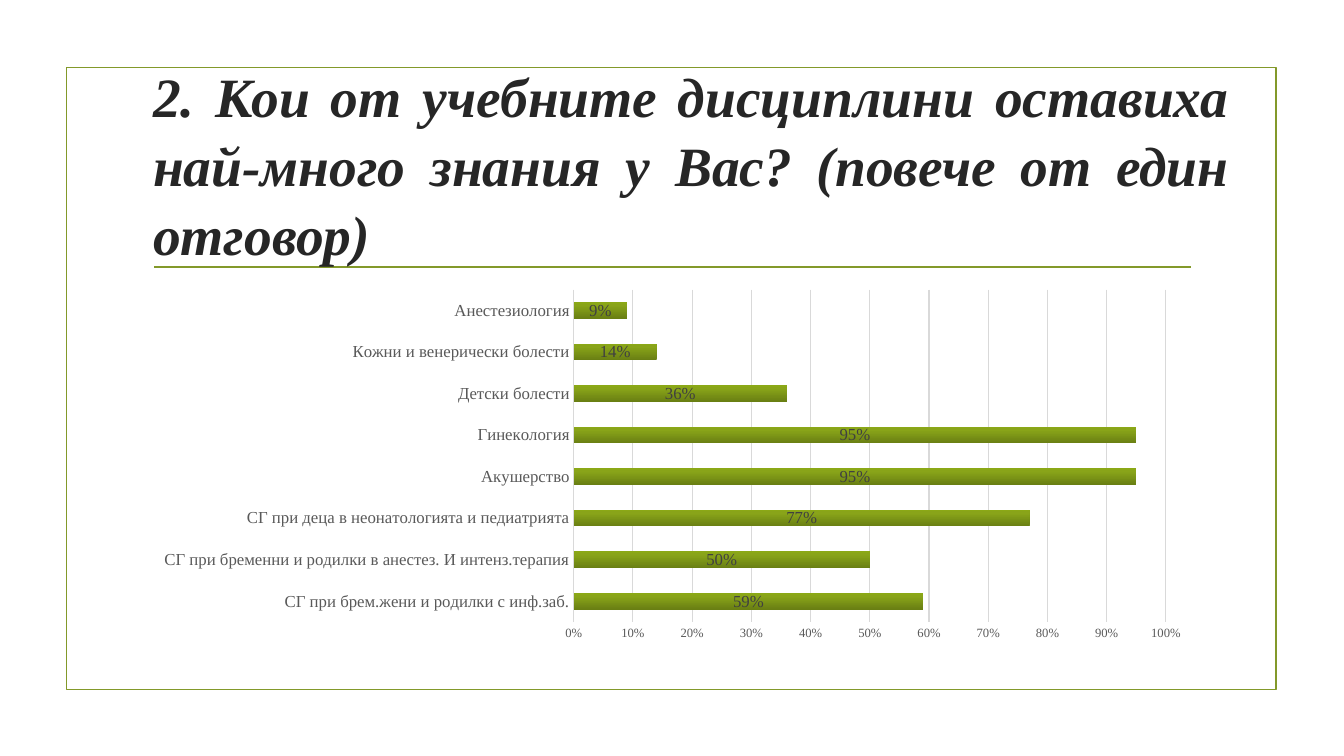
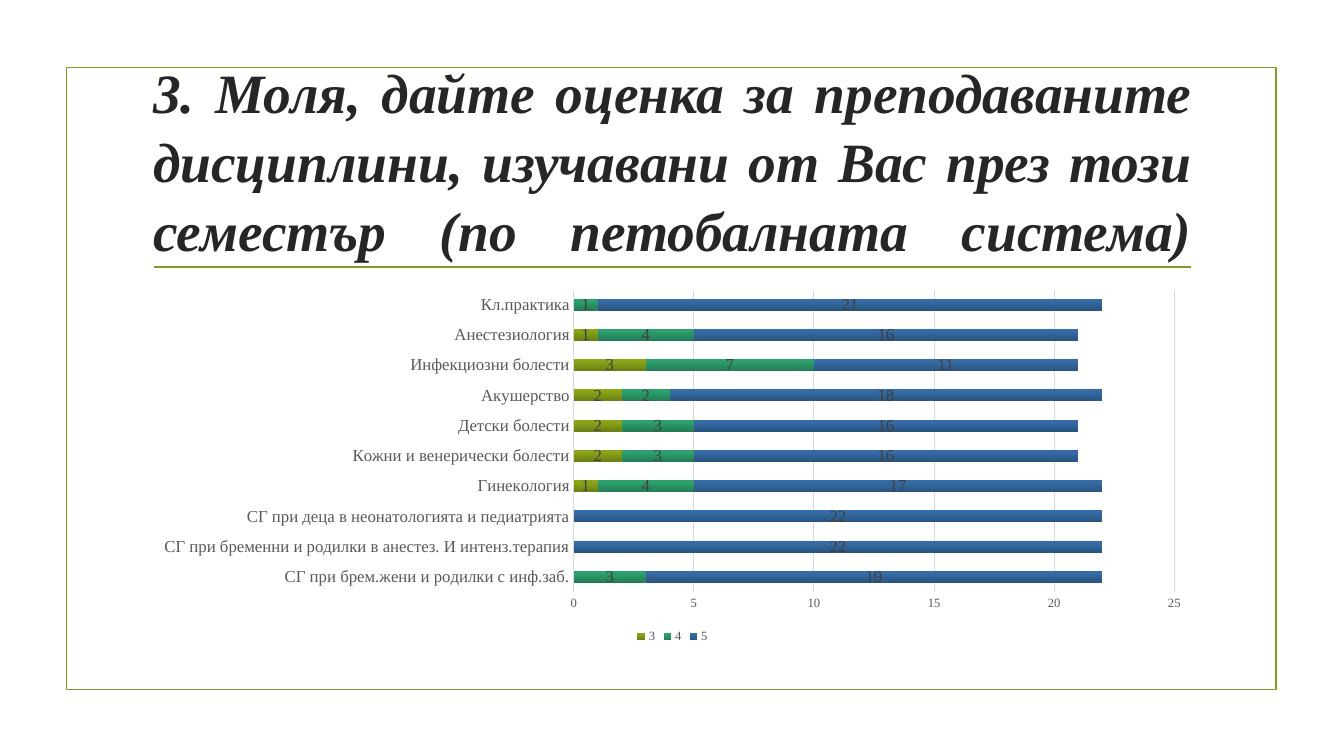
"""Build two survey slides with stacked bar charts of course disciplines."""
from dataclasses import dataclass
from typing import Optional

import lxml.etree
import pptx
import pptx.chart.data
import pptx.dml.color
import pptx.enum.chart
import pptx.enum.dml
import pptx.enum.shapes
import pptx.enum.text
import pptx.oxml
import pptx.oxml.ns
import pptx.util
from pptx.util import Inches


@dataclass(frozen=True)
class Theme:
    face: str = "Times New Roman"
    accent: str = "83992A"
    title: str = "262626"
    axis_text: str = "595959"
    label_text: str = "404040"
    grid: str = "D9D9D9"
    title_size: float = 39.6
    category_size: float = 12
    scale_size: float = 9
    chart_size: float = 10
    rule_width: float = 1.25


@dataclass(frozen=True)
class Gradient:
    dark: str
    middle: str
    light: str


@dataclass(frozen=True)
class Answers:
    name: str
    values: tuple[Optional[float], ...]
    shade: Gradient


@dataclass(frozen=True)
class Question:
    title: str
    title_top: float
    title_width: float
    title_height: float
    disciplines: tuple[str, ...]
    answers: tuple[Answers, ...]
    number_format: str
    scale_max: float
    scale_step: float
    has_legend: bool


THEME = Theme()
OLIVE = Gradient("697F13", "89A419", "8BA816")
GREEN = Gradient("237B55", "2DA06E", "2BA26F")
BLUE = Gradient("29537F", "356CA5", "336DA8")

PRACTICE = (
    "СГ при брем.жени и родилки с инф.заб.",
    "СГ при бременни и родилки в анестез. И интенз.терапия",
    "СГ при деца в неонатологията и педиатрията",
)

QUESTIONS = (
    Question(
        "2. Кои от учебните дисциплини оставиха най-много знания у Вас? (повече от един отговор)",
        1.43, 10.87, 1.04,
        PRACTICE + ("Акушерство", "Гинекология", "Детски болести",
                    "Кожни и венерически болести", "Анестезиология"),
        (Answers("Series 1", (0.59, 0.5, 0.77, 0.95, 0.95, 0.36, 0.14, 0.09), OLIVE),),
        "0%", 1, 0.1, False,
    ),
    Question(
        "3. Моля, дайте оценка за преподаваните дисциплини, изучавани от Вас през този семестър "
        "(по петобалната система)",
        1.31, 10.5, 1.19,
        PRACTICE + ("Гинекология", "Кожни и венерически болести", "Детски болести",
                    "Акушерство", "Инфекциозни болести", "Анестезиология", "Кл.практика"),
        (
            Answers("3", (None, None, None, 1, 2, 2, 2, 3, 1, None), OLIVE),
            Answers("4", (3, None, None, 4, 3, 3, 2, 7, 4, 1), GREEN),
            Answers("5", (19, 22, 22, 17, 16, 16, 18, 11, 16, 21), BLUE),
        ),
        "General", 25, 5, True,
    ),
)


def rgb(code: str) -> pptx.dml.color.RGBColor:
    """Turn a hex code into a colour."""
    return pptx.dml.color.RGBColor.from_string(code)


def style_font(font, size: float, color: str) -> None:
    """Set the shared face with a size and a colour."""
    font.name = THEME.face
    font.size = pptx.util.Pt(size)
    font.color.rgb = rgb(color)


def style_line(line, color: str, width: float) -> None:
    """Set the colour and width of a line."""
    line.color.rgb = rgb(color)
    line.width = pptx.util.Pt(width)


def shade_series(series, shade: Gradient) -> None:
    """Fill a series with a gradient that lightens upwards."""
    properties = series.format.fill._xPr
    stops = "".join(
        f'<a:gs pos="{position * 1000}"><a:srgbClr val="{color}"/></a:gs>'
        for position, color in ((0, shade.dark), (80, shade.middle), (100, shade.light))
    )
    properties.insert(0, pptx.oxml.parse_xml(
        f'<a:gradFill {pptx.oxml.ns.nsdecls("a")} rotWithShape="1">'
        f'<a:gsLst>{stops}</a:gsLst><a:lin ang="16200000" scaled="0"/></a:gradFill>'
    ))


def draw_frame(slide) -> None:
    """Draw the border and the rule under the title."""
    border = slide.shapes.add_shape(
        pptx.enum.shapes.MSO_SHAPE.RECTANGLE,
        Inches(0.66), Inches(0.67), Inches(12), Inches(6.17))
    border.shadow.inherit = False
    border.fill.background()
    style_line(border.line, THEME.accent, THEME.rule_width)
    rule = slide.shapes.add_connector(
        pptx.enum.shapes.MSO_CONNECTOR.STRAIGHT,
        Inches(1.53), Inches(2.65), Inches(11.81), Inches(2.65))
    style_line(rule.line, THEME.accent, THEME.rule_width)
    lxml.etree.SubElement(rule._element.spPr, pptx.oxml.ns.qn("a:effectLst"))


def draw_title(slide, question: Question) -> None:
    """Write the question, justified to its last line."""
    title = slide.shapes.add_textbox(
        Inches(1.42), Inches(question.title_top),
        Inches(question.title_width), Inches(question.title_height)).text_frame
    title.word_wrap = True
    title.vertical_anchor = pptx.enum.text.MSO_ANCHOR.MIDDLE
    wording = title.paragraphs[0]
    wording.text = question.title
    wording.add_line_break()
    wording.alignment = pptx.enum.text.PP_ALIGN.JUSTIFY
    wording.line_spacing = 1.04
    style_font(wording.font, THEME.title_size, THEME.title)
    wording.font.bold = True
    wording.font.italic = True


def draw_chart(slide, question: Question) -> None:
    """Draw the answers as stacked horizontal bars."""
    data = pptx.chart.data.CategoryChartData(number_format=question.number_format)
    data.categories = question.disciplines
    for answers in question.answers:
        data.add_series(answers.name, answers.values)
    chart = slide.shapes.add_chart(
        pptx.enum.chart.XL_CHART_TYPE.BAR_STACKED,
        Inches(1.42), Inches(2.8), Inches(10.5), Inches(3.63), data).chart
    style_font(chart.font, THEME.chart_size, "000000")
    chart.has_title = False
    chart.has_legend = question.has_legend
    if question.has_legend:
        chart.legend.position = pptx.enum.chart.XL_LEGEND_POSITION.BOTTOM
        chart.legend.include_in_layout = False
        style_font(chart.legend.font, THEME.scale_size, THEME.axis_text)

    disciplines, scale = chart.category_axis, chart.value_axis
    for axis, size in ((disciplines, THEME.category_size), (scale, THEME.scale_size)):
        axis.major_tick_mark = pptx.enum.chart.XL_TICK_MARK.NONE
        axis.minor_tick_mark = pptx.enum.chart.XL_TICK_MARK.NONE
        style_font(axis.tick_labels.font, size, THEME.axis_text)
    style_line(disciplines.format.line, THEME.grid, 1)
    scale.format.line.fill.background()
    scale.minimum_scale = 0
    scale.maximum_scale = question.scale_max
    scale.major_unit = question.scale_step
    scale.has_major_gridlines = True
    style_line(scale.major_gridlines.format.line, THEME.grid, 0.75)
    scale.tick_labels.number_format = question.number_format
    scale.tick_labels.number_format_is_linked = False

    bars = chart.plots[0]
    bars.gap_width = 150
    bars.overlap = 100
    bars.vary_by_categories = False
    for series, answers in zip(bars.series, question.answers):
        shade_series(series, answers.shade)
        labels = series.data_labels
        labels.show_value = True
        labels.number_format = question.number_format
        labels.number_format_is_linked = False
        style_font(labels.font, THEME.category_size, THEME.label_text)


def main() -> None:
    """Build and save the presentation."""
    presentation = pptx.Presentation()
    presentation.slide_width = Inches(13.33)
    presentation.slide_height = Inches(7.5)
    for question in QUESTIONS:
        slide = presentation.slides.add_slide(presentation.slide_layouts[6])
        draw_frame(slide)
        draw_title(slide, question)
        draw_chart(slide, question)
    presentation.save("out.pptx")


if __name__ == "__main__":
    main()
